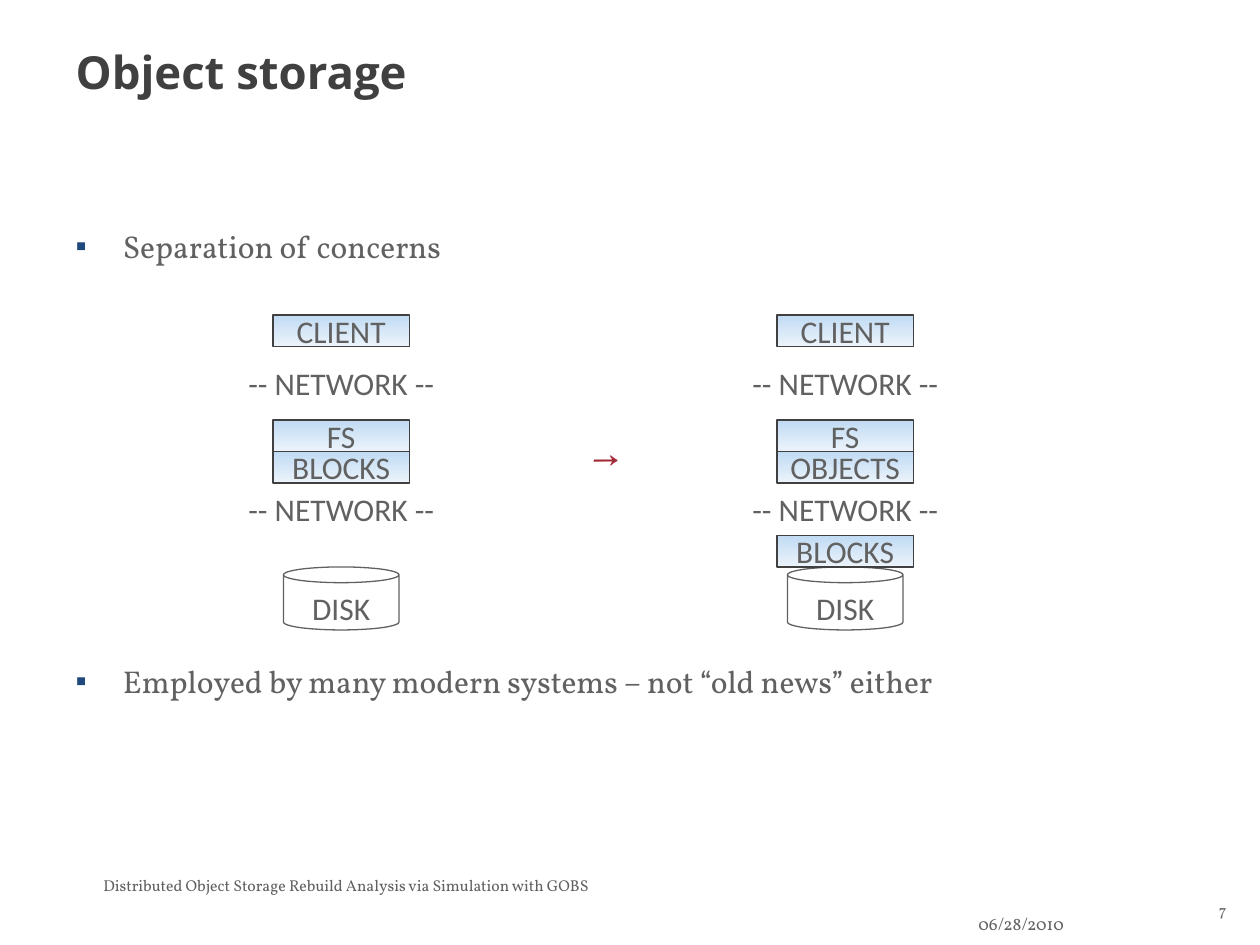
from dataclasses import dataclass

from lxml import etree
from pptx import Presentation
from pptx.dml.color import RGBColor
from pptx.enum import shapes, text
from pptx.oxml import ns
from pptx.util import Pt


@dataclass(frozen=True)
class Theme:
    heading: str = "Open Sans"
    body: str = "Vollkorn"
    diagram: str = "Calibri"
    dark: str = "404040"
    grey: str = "616161"
    bullet: str = "1F497D"
    accent: str = "A22B38"
    box_top: str = "C1DBF3"
    box_bottom: str = "EBF3FB"
    title_size: float = 26
    text_size: float = 18
    date_size: float = 10
    footer_size: float = 9
    line: float = 0.75


T = Theme()
ROW = 18  # height of one diagram layer
# Layers as (kind, label, offset from the top of the stack, in rows)
SHARED = [
    ("box", "CLIENT", 0),
    ("label", "-- NETWORK --", 5 / 3),
    ("box", "FS", 10 / 3),
    ("label", "-- NETWORK --", 17 / 3),
    ("disk", "DISK", 8),
]
BLOCK_STACK = SHARED + [("box", "BLOCKS", 13 / 3)]
OBJECT_STACK = SHARED + [("box", "OBJECTS", 13 / 3), ("box", "BLOCKS", 7)]
WIDTHS = {"box": 78, "label": 162, "disk": 66}


def rgb(value):
    return RGBColor.from_string(value)


def points(*lengths):
    return [Pt(round(v, 2)) for v in lengths]


def place(sp, box):
    sp.left, sp.top, sp.width, sp.height = points(*box)


def add_run(p, words, font, size, color, bold=False):
    r = p.add_run()
    r.text = words
    r.font.name, r.font.size, r.font.bold = font, Pt(size), bold
    r.font.color.rgb = rgb(color)


def add_label(s, box, words, font, size, color=T.grey,
              align=text.PP_ALIGN.LEFT, wrap=True):
    sp = s.shapes.add_textbox(*points(*box))
    sp.text_frame.word_wrap = wrap
    p = sp.text_frame.paragraphs[0]
    p.alignment = align
    add_run(p, words, font, size, color)
    return sp


def center_tightly(tf):
    tf.vertical_anchor = text.MSO_ANCHOR.MIDDLE
    tf.margin_left = tf.margin_right = tf.margin_top = tf.margin_bottom = 0


def set_bullet(p, char, color, indent):
    pPr = p._p.get_or_add_pPr()
    pPr.set("marL", str(Pt(indent)))
    pPr.set("indent", str(-Pt(indent)))
    clr = etree.SubElement(pPr, ns.qn("a:buClr"))
    etree.SubElement(clr, ns.qn("a:srgbClr"), val=color)
    etree.SubElement(pPr, ns.qn("a:buChar"), char=char)


def fill_title(sp, box, words):
    place(sp, box)
    tf = sp.text_frame
    tf.vertical_anchor = text.MSO_ANCHOR.TOP
    tf.auto_size = text.MSO_AUTO_SIZE.NONE
    p = tf.paragraphs[0]
    p.alignment = text.PP_ALIGN.LEFT
    add_run(p, words, T.heading, T.title_size, T.dark, bold=True)


def fill_bullets(sp, box, items, gap):
    place(sp, box)
    tf = sp.text_frame
    tf.auto_size = text.MSO_AUTO_SIZE.NONE
    for i, words in enumerate(items):
        p = tf.add_paragraph() if i else tf.paragraphs[0]
        set_bullet(p, "▪", T.bullet, 27)
        p.space_before = Pt(gap if i else 0)
        add_run(p, words, T.body, T.text_size, T.grey)


def add_layer(s, kind, box, words):
    """Add one outlined layer of a stack: a shaded box or a disk."""
    preset = shapes.MSO_SHAPE.CAN if kind == "disk" else shapes.MSO_SHAPE.RECTANGLE
    sp = s.shapes.add_shape(preset, *points(*box))
    sp.shadow.inherit = False
    sp.line.width = Pt(T.line)
    tf = sp.text_frame
    if kind == "disk":
        sp.fill.background()
        sp.line.color.rgb = rgb(T.grey)
        tf.vertical_anchor = text.MSO_ANCHOR.TOP
    else:
        sp.fill.gradient()
        sp.fill.gradient_angle = 270
        for stop, color in zip(sp.fill.gradient_stops, (T.box_top, T.box_bottom)):
            stop.color.rgb = rgb(color)
        sp.line.color.rgb = rgb(T.dark)
        center_tightly(tf)
    p = tf.paragraphs[0]
    p.alignment = text.PP_ALIGN.CENTER
    add_run(p, words, T.diagram, T.text_size, T.grey)


def add_stack(s, left, top, width, layers):
    """Draw storage layers centred in a column of the given width."""
    for kind, words, row in layers:
        w = WIDTHS[kind]
        h = 2 * ROW if kind == "disk" else ROW
        box = (left + (width - w) / 2, top + row * ROW, w, h)
        if kind == "label":
            sp = add_label(s, box, words, T.diagram, T.text_size,
                           align=text.PP_ALIGN.CENTER)
            center_tightly(sp.text_frame)
        else:
            add_layer(s, kind, box, words)


def add_comparison(s, left, top):
    add_stack(s, left, top, 162, BLOCK_STACK)
    add_stack(s, left + 288, top, 162, OBJECT_STACK)
    add_label(s, (left + 216, top + 66, 32, 29), "→", T.body, T.text_size,
              T.accent, text.PP_ALIGN.CENTER, wrap=False)


def add_footer(s, left, top):
    add_label(s, (left, top, 468, 18),
              "Distributed Object Storage Rebuild Analysis via Simulation with GOBS",
              T.body, T.footer_size)
    add_label(s, (left + 500, top + 21, 108, 17), "06/28/2010", T.body, T.date_size)
    add_label(s, (left + 626, top + 14, 30, 29), "7", T.body, T.footer_size,
              align=text.PP_ALIGN.RIGHT)


def main():
    prs = Presentation()
    prs.slide_width, prs.slide_height = Pt(720), Pt(540)
    s = prs.slides.add_slide(prs.slide_layouts[1])
    fill_title(s.shapes.title, (36, 21.6, 648, 90), "Object storage")
    fill_bullets(s.placeholders[1], (36, 126, 648, 356), [
        "Separation of concerns",
        "Employed by many modern systems – not “old news” either",
    ], gap=227)
    add_comparison(s, 114, 180)
    add_footer(s, 52, 497)
    prs.save("out.pptx")


if __name__ == "__main__":
    main()
